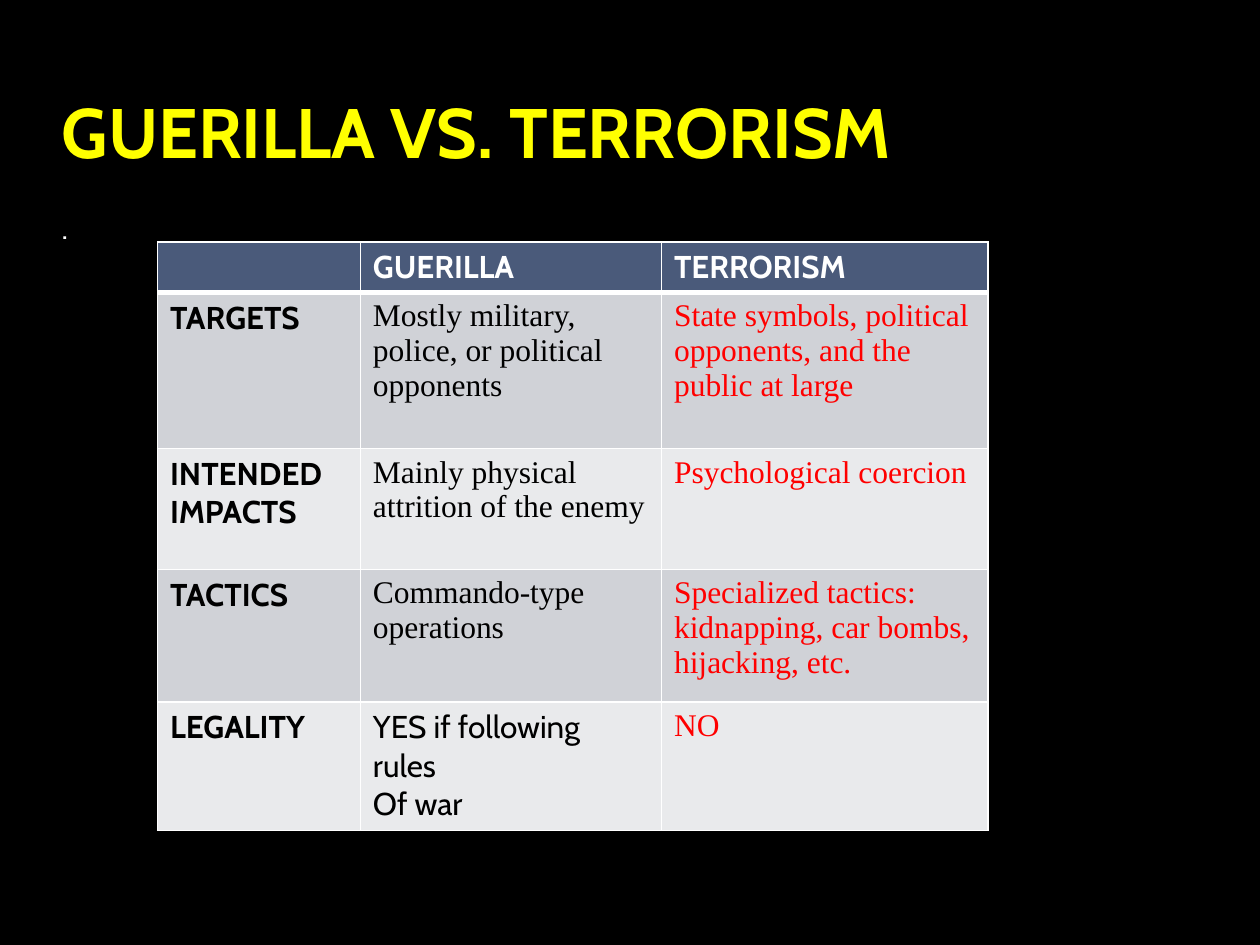
from typing import NamedTuple

from lxml.etree import SubElement
from pptx import Presentation
from pptx.dml.color import RGBColor as RGB
from pptx.enum.text import MSO_ANCHOR as Anchor, MSO_AUTO_SIZE as AutoSize, PP_ALIGN as Align
from pptx.oxml.ns import qn
from pptx.util import Inches, Pt

COLORS = {
    "background": "000000", "title": "FFFF00", "white": "FFFFFF",
    "header": "4A5A7A", "odd": "D0D2D7", "even": "E9EAEC",
    "ink": "000000", "terrorism": "FF0000",
}
SANS, SERIF = "Cabin", "Times New Roman"
COL_WIDTHS = (1.61, 2.39, 2.59)


class Row(NamedTuple):
    label: str
    guerilla: str
    terrorism: str
    height: float
    guerilla_font: str = SERIF


HEADER = Row("", "GUERILLA", "TERRORISM", 0.4)
ROWS = (
    Row("TARGETS", "Mostly military, police, or political opponents",
        "State symbols, political opponents, and the public at large", 1.24),
    Row("INTENDED\nIMPACTS", "Mainly physical attrition of the enemy",
        "Psychological coercion", 0.96),
    Row("TACTICS", "Commando-type operations",
        "Specialized tactics: kidnapping, car bombs, hijacking, etc.", 1.05),
    Row("LEGALITY", "YES if following rules\nOf war", "NO", 1.02, SANS),
)


def color(name: str) -> RGB:
    return RGB.from_string(COLORS[name])


def write(tf, text: str, font: str, size: float, ink: str, bold: bool = False) -> None:
    tf.word_wrap = True
    tf.text = text
    for p in tf.paragraphs:
        p.alignment = Align.LEFT
        p.font.name, p.font.size, p.font.bold = font, Pt(size), bold
        p.font.color.rgb = color(ink)


def set_borders(cell, bottom: float) -> None:
    """White 1 pt borders, with the bottom width given in points."""
    props = cell._tc.get_or_add_tcPr()
    for i, (side, width) in enumerate((("L", 1), ("R", 1), ("T", 1), ("B", bottom))):
        line = props.makeelement(qn(f"a:ln{side}"), {"w": str(Pt(width))})
        fill = SubElement(line, qn("a:solidFill"))
        SubElement(fill, qn("a:srgbClr"), val=COLORS["white"])
        props.insert(i, line)


def fill_row(table, index: int, row: Row) -> None:
    is_header = index == 0
    table.rows[index].height = Inches(row.height)
    background = "header" if is_header else ("even", "odd")[index % 2]
    styles = (
        [(SANS, "white", True)] * 3 if is_header else
        [(SANS, "ink", True), (row.guerilla_font, "ink", False), (SERIF, "terrorism", False)]
    )
    for col, (text, (font, ink, bold)) in enumerate(zip(row[:3], styles)):
        cell = table.cell(index, col)
        cell.fill.solid()
        cell.fill.fore_color.rgb = color(background)
        write(cell.text_frame, text, font, 18, ink, bold)
        set_borders(cell, 3 if is_header else 1)


def add_comparison(s) -> None:
    rows = (HEADER, *ROWS)
    table = s.shapes.add_table(
        len(rows), len(COL_WIDTHS), Inches(1.25), Inches(1.92),
        Inches(sum(COL_WIDTHS)), Inches(sum(row.height for row in rows)),
    ).table
    for column, width in zip(table.columns, COL_WIDTHS):
        column.width = Inches(width)
    for index, row in enumerate(rows):
        fill_row(table, index, row)


def main() -> None:
    prs = Presentation()
    prs.slide_width, prs.slide_height = Inches(10), Inches(7.5)
    s = prs.slides.add_slide(prs.slide_layouts[5])
    s.background.fill.solid()
    s.background.fill.fore_color.rgb = color("background")

    body = s.shapes.add_textbox(Inches(0.39), Inches(1.6), Inches(8.4), Inches(5.17))
    write(body.text_frame, ".", SANS, 18, "white")

    title = s.shapes.title
    title.left, title.top = Inches(0.39), Inches(0.25)
    title.width, title.height = Inches(8.4), Inches(1.17)
    write(title.text_frame, "GUERILLA VS. TERRORISM", SANS, 40, "title", True)
    title.text_frame.vertical_anchor = Anchor.BOTTOM
    title.text_frame.auto_size = AutoSize.NONE

    add_comparison(s)
    prs.save("out.pptx")


if __name__ == "__main__":
    main()
